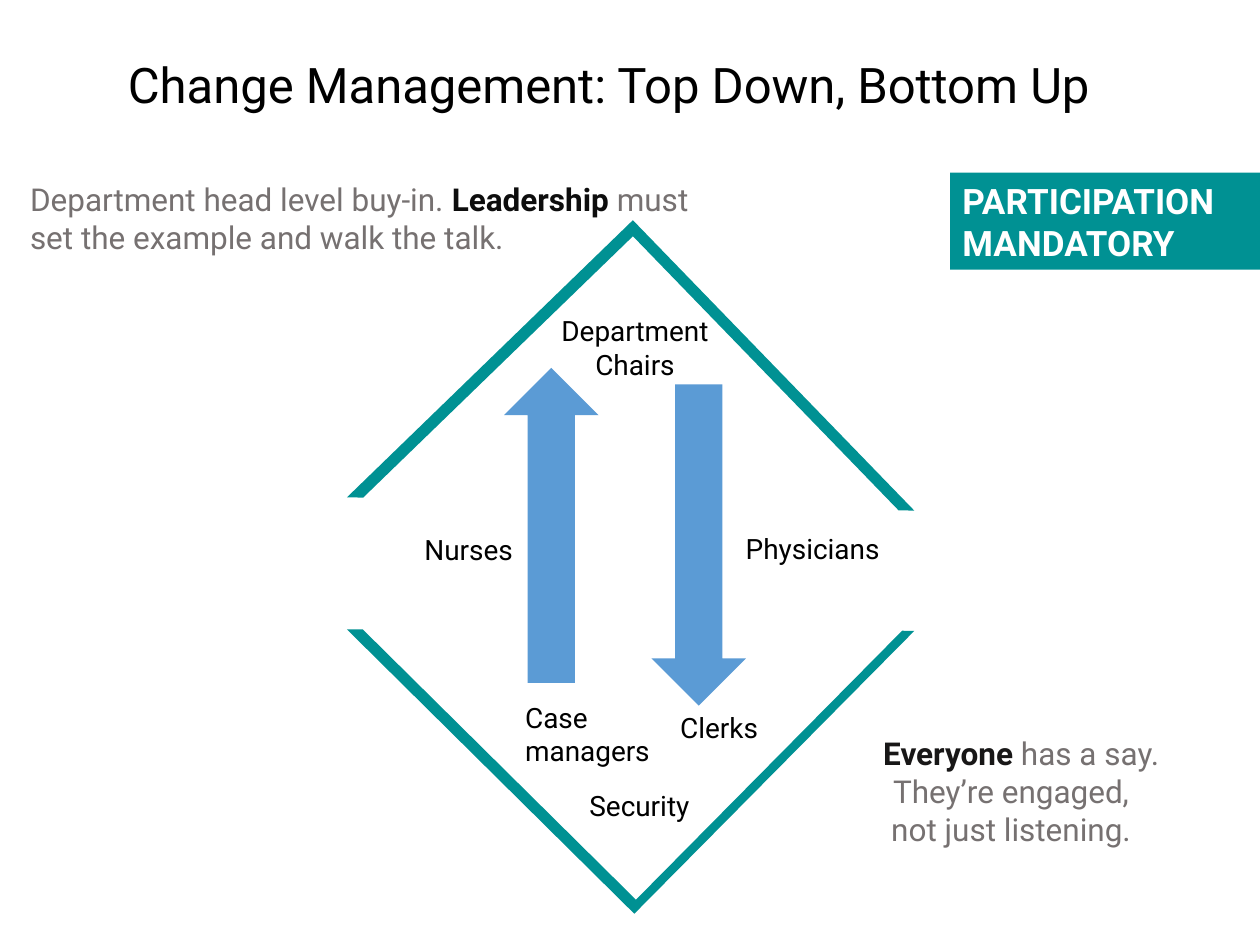
from pptx import Presentation
from pptx.dml.color import RGBColor
from pptx.enum.shapes import MSO_SHAPE
from pptx.enum.text import MSO_ANCHOR, PP_ALIGN
from pptx.util import Inches, Pt

COLORS = {
    "teal": "009193", "blue": "5B9BD5", "black": "000000", "gray": "767171",
    "dark": "0D0D0D", "charcoal": "181717", "white": "FFFFFF",
}
FONT = "Roboto"
LEFT, CENTER = PP_ALIGN.LEFT, PP_ALIGN.CENTER

TITLE = ((0.33, 0.38, 9, 0.57), 28, CENTER,
         [[("Change Management: Top Down, Bottom Up", "black", False)]])
LEADERSHIP = ((0.14, 1.38, 5.5, 0.71), 18, LEFT,
              [[("Department head level buy-in. ", "gray", False),
                ("Leadership", "dark", True),
                (" must set the example and walk the talk.", "gray", False)]])
EVERYONE = ((3.69, 5.78, 8.67, 1.01), 18, CENTER,
            [[("Everyone ", "charcoal", True), ("has a say.", "gray", False)],
             [("They’re engaged,", "gray", False)],
             [("not just listening.", "gray", False)]])
BANNER_BOX = (7.54, 1.37, 2.46, 0.77)
BANNER_LINES = [[("PARTICIPATION", "white", True)], [("MANDATORY", "white", True)]]
ROLES = [
    ("Clerks", (5.3, 5.59, 0.91, 0.37), LEFT),
    ("Case managers", (4.07, 5.51, 1.53, 0.64), LEFT),
    ("Security", (4.58, 6.21, 1.53, 0.37), LEFT),
    ("Physicians", (5.82, 4.17, 1.44, 0.37), LEFT),
    ("Nurses", (3.27, 4.18, 0.91, 0.37), LEFT),
    ("Department Chairs", (4.32, 2.44, 1.44, 0.64), CENTER),
]
CHEVRONS = [
    ((3.4, 2.42, 3.21, 3.16), 45.9, (0.028, 0.029)),
    ((3.4, 3.42, 3.21, 3.16), 224.7, (0.028, 0.022)),
]
ARROWS = [((4, 2.92, 0.75, 2.5), 0), ((5.17, 3.05, 0.75, 2.55), 180)]


def add_figure(slide, kind, box, color, rotation=0, adjustments=()):
    shape = slide.shapes.add_shape(kind, *map(Inches, box))
    shape.shadow.inherit = False
    shape.fill.solid()
    shape.fill.fore_color.rgb = RGBColor.from_string(COLORS[color])
    shape.line.fill.background()
    shape.rotation = rotation
    for index, value in enumerate(adjustments):
        shape.adjustments[index] = value
    return shape


def write_text(shape, size, alignment, lines, anchor=MSO_ANCHOR.TOP):
    frame = shape.text_frame
    frame.word_wrap = True
    frame.vertical_anchor = anchor
    for index, line in enumerate(lines):
        paragraph = frame.add_paragraph() if index else frame.paragraphs[0]
        paragraph.alignment = alignment
        for text, color, bold in line:
            run = paragraph.add_run()
            run.text = text
            run.font.color.rgb = RGBColor.from_string(COLORS[color])
            for name, value in {"name": FONT, "size": Pt(size), "bold": bold}.items():
                setattr(run.font, name, value)
    return frame


def add_text(slide, box, size, alignment, lines):
    return write_text(slide.shapes.add_textbox(*map(Inches, box)), size, alignment, lines)


def main():
    """Build the change management slide."""
    presentation = Presentation()
    presentation.slide_width, presentation.slide_height = Inches(10), Inches(7.5)
    slide = presentation.slides.add_slide(presentation.slide_layouts[6])

    add_text(slide, *LEADERSHIP)
    for box, rotation, adjustments in CHEVRONS:
        add_figure(slide, MSO_SHAPE.HALF_FRAME, box, "teal", rotation, adjustments)
    add_text(slide, *TITLE)
    everyone = add_text(slide, *EVERYONE)
    everyone.paragraphs[0]._p.get_or_add_pPr().set("indent", str(Inches(0.16)))
    for box, rotation in ARROWS:
        add_figure(slide, MSO_SHAPE.UP_ARROW, box, "blue", rotation)
    for role, box, alignment in ROLES:
        add_text(slide, box, 16, alignment, [[(role, "black", False)]])
    banner = add_figure(slide, MSO_SHAPE.RECTANGLE, BANNER_BOX, "teal")
    write_text(banner, 20, LEFT, BANNER_LINES, MSO_ANCHOR.MIDDLE)

    presentation.save("out.pptx")


if __name__ == "__main__":
    main()
